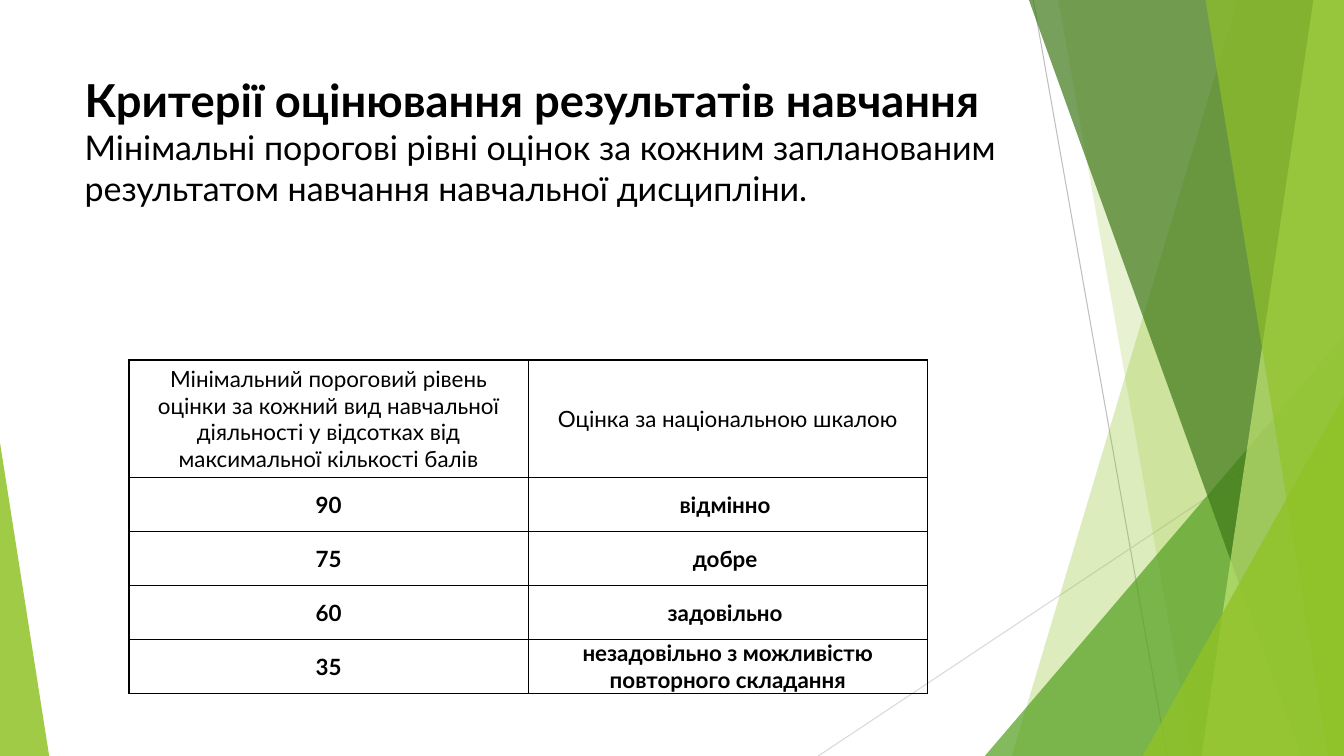
from dataclasses import dataclass

from lxml import etree
from pptx import Presentation
from pptx.dml.color import RGBColor
from pptx.enum import shapes, text
from pptx.oxml import ns
from pptx.util import Cm, Pt


@dataclass(frozen=True)
class Theme:
    font: str = "Lato"
    ink: str = "000000"
    lime: str = "90C226"
    pale: str = "C0E474"
    green: str = "54A021"
    dark: str = "3F7819"
    grey: str = "BFBFBF"
    light_grey: str = "D9D9D9"
    title_size: float = 32.4
    subtitle_size: float = 24.3
    cell_size: float = 16


THEME = Theme()
WIDTH, HEIGHT = 33.87, 19.05  # cm

TITLE = "Критерії оцінювання результатів навчання"
SUBTITLE = ("Мінімальні порогові рівні оцінок за кожним запланованим "
            "результатом навчання навчальної дисципліни.")
GRADES = [
    ("Мінімальний пороговий рівень оцінки за кожний вид навчальної діяльності "
     "у відсотках від максимальної кількості балів",
     "Оцінка за національною шкалою"),
    ("90", "відмінно "),
    ("75", "добре "),
    ("60", "задовільно "),
    ("35", "незадовільно з можливістю повторного складання"),
]


def set_attrs(obj, values):
    for name, value in values.items():
        setattr(obj, name, value)


def add_run(p, content, size, bold):
    r = p.add_run()
    r.text = content
    set_attrs(r.font, {"name": THEME.font, "size": Pt(size), "bold": bold})
    r.font.color.rgb = RGBColor.from_string(THEME.ink)


def paint(sp, color, opacity):
    """Flat translucent fill, no outline; opacity in percent."""
    sp.shadow.inherit = False
    sp.line.fill.background()
    sp.fill.solid()
    sp.fill.fore_color.rgb = RGBColor.from_string(color)
    clr = sp.fill._xPr.find(".//" + ns.qn("a:srgbClr"))
    etree.SubElement(clr, ns.qn("a:alpha"), val=str(opacity * 1000))


def add_line(s, x1, y1, x2, y2, color):
    line = s.shapes.add_connector(shapes.MSO_CONNECTOR.STRAIGHT,
                                  Cm(x1), Cm(y1), Cm(x2), Cm(y2))
    line.line.width = Pt(0.75)
    line.line.color.rgb = RGBColor.from_string(color)
    etree.SubElement(line._element.spPr, ns.qn("a:effectLst"))


def add_band(s, top_x, bottom_x, color, opacity):
    """Full-height band from a slanted left edge to the slide's right edge."""
    outline = s.shapes.build_freeform(Cm(top_x), 0)
    outline.add_line_segments([(Cm(WIDTH), 0), (Cm(WIDTH), Cm(HEIGHT)),
                               (Cm(bottom_x), Cm(HEIGHT))], close=True)
    paint(outline.convert_to_shape(), color, opacity)


def add_corner(s, left, top, width, apex, color, opacity):
    """Right triangle standing on the slide's bottom edge."""
    sp = s.shapes.add_shape(shapes.MSO_SHAPE.ISOSCELES_TRIANGLE, Cm(left),
                            Cm(top), Cm(width), Cm(HEIGHT - top))
    sp.adjustments[0] = apex
    paint(sp, color, opacity)


def add_facets(s):
    add_line(s, 26.04, 0, 29.41, HEIGHT, THEME.grey)
    add_line(s, WIDTH, 10.24, 20.62, HEIGHT, THEME.light_grey)
    add_band(s, 31.19, 25.5, THEME.lime, 30)
    add_band(s, 26.67, 30.05, THEME.lime, 20)
    add_corner(s, 24.82, 8.46, WIDTH - 24.82, 1, THEME.green, 72)
    add_band(s, 25.93, 32.79, THEME.dark, 70)
    add_band(s, 33.1, 30.28, THEME.pale, 70)
    add_band(s, 30.38, 33.48, THEME.lime, 65)
    add_corner(s, 28.8, 9.98, WIDTH - 28.8, 1, THEME.lime, 80)
    add_corner(s, 0, 11.15, 1.24, 0, THEME.lime, 85)


def fill_title(s):
    sp = s.shapes.title
    set_attrs(sp, {"left": Cm(1.88), "top": Cm(1.7),
                   "width": Cm(23.88), "height": Cm(3.66)})
    tf = sp.text_frame
    set_attrs(tf, {"word_wrap": True, "auto_size": text.MSO_AUTO_SIZE.NONE,
                   "vertical_anchor": text.MSO_ANCHOR.TOP})
    p = tf.paragraphs[0]
    p.alignment = text.PP_ALIGN.LEFT
    add_run(p, TITLE, THEME.title_size, True)
    p.add_line_break()
    add_run(p, SUBTITLE, THEME.subtitle_size, False)


def set_borders(cell):
    """Thin borders; they must precede the fill in the cell properties."""
    tc_pr = cell._tc.get_or_add_tcPr()
    for i, side in enumerate(("lnL", "lnR", "lnT", "lnB")):
        ln = etree.Element(ns.qn("a:" + side), w=str(Pt(1)))
        fill = etree.SubElement(ln, ns.qn("a:solidFill"))
        etree.SubElement(fill, ns.qn("a:srgbClr"), val=THEME.ink)
        tc_pr.insert(i, ln)


def fill_cell(cell, content, bold):
    set_attrs(cell, {"margin_left": Cm(0.18), "margin_right": Cm(0.18),
                     "margin_top": 0, "margin_bottom": 0,
                     "vertical_anchor": text.MSO_ANCHOR.MIDDLE})
    cell.fill.background()
    set_borders(cell)
    p = cell.text_frame.paragraphs[0]
    p.alignment = text.PP_ALIGN.CENTER
    add_run(p, content, THEME.cell_size, bold)


def add_grades(s):
    col_width, head_height, row_height = 10.06, 2.97, 1.36
    height = head_height + row_height * (len(GRADES) - 1)
    table = s.shapes.add_table(len(GRADES), 2, Cm(3.25), Cm(9.07),
                               Cm(2 * col_width), Cm(height)).table
    set_attrs(table, {"first_row": False, "horz_banding": False})
    for i, grade in enumerate(GRADES):
        table.rows[i].height = Cm(row_height if i else head_height)
        for j, content in enumerate(grade):
            fill_cell(table.cell(i, j), content, i > 0)


def main():
    prs = Presentation()
    set_attrs(prs, {"slide_width": Cm(WIDTH), "slide_height": Cm(HEIGHT)})
    s = prs.slides.add_slide(prs.slide_layouts[5])  # Title Only

    # Background decoration
    add_facets(s)
    # Heading
    fill_title(s)
    # Grade thresholds
    add_grades(s)

    prs.save("out.pptx")


if __name__ == "__main__":
    main()
